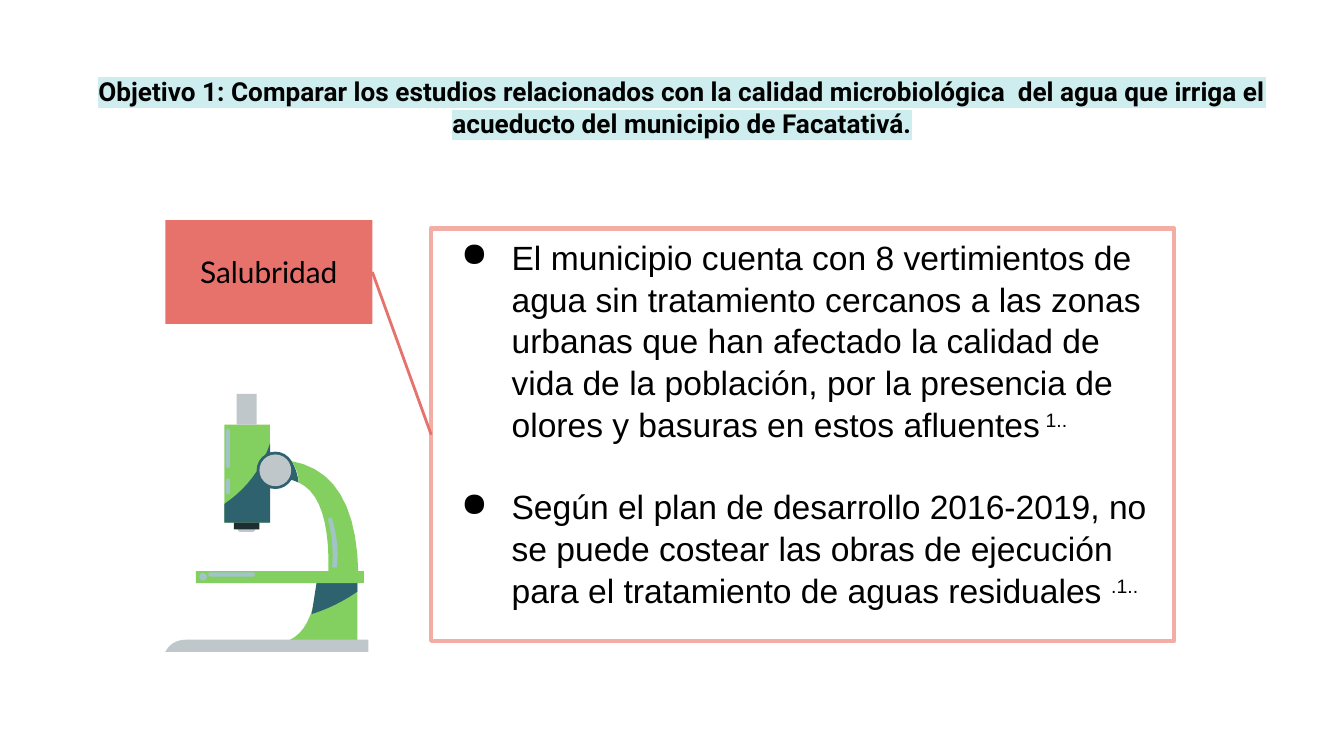
from lxml import etree
from pptx import Presentation
from pptx.dml.color import RGBColor
from pptx.enum.shapes import MSO_CONNECTOR, MSO_SHAPE
from pptx.enum.text import MSO_ANCHOR, PP_ALIGN
from pptx.oxml.ns import qn
from pptx.util import Pt

RECT, OVAL, PILL = MSO_SHAPE.RECTANGLE, MSO_SHAPE.OVAL, MSO_SHAPE.ROUNDED_RECTANGLE
LEFT, CENTER = PP_ALIGN.LEFT, PP_ALIGN.CENTER
TOP, MIDDLE = MSO_ANCHOR.TOP, MSO_ANCHOR.MIDDLE

BLACK, CORAL, PINK, AQUA = "000000", "E7716B", "F2AEA4", "CDEDEF"
GREEN, TEAL, DARK, GREY, SHEEN = "83D061", "2D626E", "1E2D31", "BFC7CA", "A2C4C9"

OBJECTIVE = ("Objetivo 1: Comparar los estudios relacionados con la calidad microbiológica  "
             "del agua que irriga el acueducto del municipio de Facatativá.")
TOPIC = " Salubridad "
# Each finding is its statement and its superscript reference
FINDINGS = [
    ("El municipio cuenta con 8 vertimientos de agua sin tratamiento cercanos a las zonas "
     "urbanas que han afectado la calidad de vida de la población, por la presencia de "
     "olores y basuras en estos afluentes", " 1.."),
    ("Según el plan de desarrollo 2016-2019, no se puede costear las obras de ejecución "
     "para el tratamiento de aguas residuales ", ".1.."),
]

# Boxes are left, top, width, height
OBJECTIVE_BOX = (19.4, 32.4, 692, 45.4)
FINDINGS_BOX = (231, 122.4, 398, 221)
TOPIC_BOX = (88.6, 118, 110.9, 55.5)
LINE_SPACING = 1.04

# Microscope, back to front: a preset with its box, or an outline (None) whose
# two-number steps are corners and four-number steps are a bend and its end
MICROSCOPE = [
    (None, GREEN, [(152, 344), (168, 340, 170, 310), (191.5, 310), (191.5, 344)]),
    (None, TEAL, [(170, 310), (191.5, 310), (191.5, 317), (180, 325, 167, 329)]),
    (None, TEAL, [(142, 245.5), (142, 255), (152, 255, 160, 258.5), (159, 251, 156, 247)]),
    (None, GREEN, [(156, 247), (160, 252, 160, 258.5), (177, 266, 176, 307),
                   (192, 307), (191, 253, 156, 247)]),
    (RECT, GREEN, (120.2, 227.5, 24.5, 52.5)),
    (None, TEAL, [(144.7, 237.6), (138, 258, 120.2, 270), (120.2, 280), (144.7, 280)]),
    (PILL, GREY, (127.4, 282, 9.4, 3)),
    (RECT, DARK, (125.3, 280, 13.7, 3.6)),
    (OVAL, TEAL, (137.5, 242, 20, 20)),
    (OVAL, GREY, (139, 243.5, 17, 17)),
    (RECT, GREY, (126.7, 211, 10.8, 16.5)),
    (RECT, GREEN, (105, 306, 90, 6.5)),
    (None, GREY, [(88.6, 349.2), (92, 342.7, 100, 342.7), (197.3, 342.7), (197.3, 349.2)]),
    (PILL, SHEEN, (121, 256.3, 2.2, 8.6)),
    (PILL, SHEEN, (121, 229.7, 2.2, 21)),
    (OVAL, SHEEN, (106.8, 307, 4, 4)),
    (PILL, SHEEN, (111.6, 306.7, 25, 2.2)),
    (None, SHEEN, [(175.7, 278), (179, 290, 178, 304), (180.5, 304), (182, 290, 177.5, 277)]),
]


def rgb(colour):
    return RGBColor.from_string(colour)


def pts(values):
    return [Pt(value) for value in values]


def paint(part, fill=None, line=None, width=0):
    part.shadow.inherit = False
    if fill:
        part.fill.solid()
        part.fill.fore_color.rgb = rgb(fill)
    else:
        part.fill.background()
    if line:
        part.line.color.rgb = rgb(line)
        part.line.width = Pt(width)
    else:
        part.line.fill.background()
    return part


def add_preset(slide, preset, box, **look):
    part = slide.shapes.add_shape(preset, *pts(box))
    if preset == PILL:
        part.adjustments[0] = 0.5
    return paint(part, **look)


def flatten(steps, pieces=10):
    """Turn corners and quadratic curves into a list of corner points."""
    corners = []
    for step in steps:
        if len(step) == 2:
            corners.append(step)
            continue
        start, bend, end = corners[-1], step[:2], step[2:]
        for piece in range(1, pieces + 1):
            t = piece / pieces
            corners.append([(1 - t) ** 2 * a + 2 * t * (1 - t) * b + t * t * c
                            for a, b, c in zip(start, bend, end)])
    return corners


def add_outline(slide, steps, **look):
    start, *rest = [pts(corner) for corner in flatten(steps)]
    builder = slide.shapes.build_freeform(*start)
    builder.add_line_segments(rest, close=True)
    return paint(builder.convert_to_shape(), **look)


def set_frame(holder, anchor=TOP, side=7.2, top=7.2):
    frame = holder.text_frame
    frame.word_wrap = True
    frame.vertical_anchor = anchor
    frame.margin_left = frame.margin_right = Pt(side)
    frame.margin_top = frame.margin_bottom = Pt(top)
    return frame


def add_text(paragraph, text, font="Arial", size=18, bold=False, align=LEFT,
             spacing=LINE_SPACING, highlight=None, baseline=0):
    paragraph.alignment = align
    paragraph.line_spacing = spacing
    run = paragraph.add_run()
    run.text = text
    run.font.size, run.font.bold = Pt(size), bold
    run.font.color.rgb = rgb(BLACK)
    run.font.name = font
    properties = run._r.get_or_add_rPr()
    if baseline:
        properties.set("baseline", str(baseline * 1000))
    if highlight:
        mark = etree.Element(qn("a:highlight"))
        etree.SubElement(mark, qn("a:srgbClr"), val=highlight)
        properties.find(qn("a:latin")).addprevious(mark)


def add_bullet(paragraph, indent=36, hanging=27):
    properties = paragraph._p.get_or_add_pPr()
    properties.set("marL", str(Pt(indent)))
    properties.set("indent", str(-Pt(hanging)))
    colour = etree.SubElement(properties, qn("a:buClr"))
    etree.SubElement(colour, qn("a:srgbClr"), val=BLACK)
    etree.SubElement(properties, qn("a:buChar"), char="●")


def main():
    deck = Presentation()
    deck.slide_width, deck.slide_height = Pt(720), Pt(405)
    slide = deck.slides.add_slide(deck.slide_layouts[6])

    objective = set_frame(slide.shapes.add_textbox(*pts(OBJECTIVE_BOX)))
    add_text(objective.paragraphs[0], OBJECTIVE, font="Roboto", size=14, bold=True,
             align=CENTER, highlight=AQUA)

    panel = add_preset(slide, RECT, FINDINGS_BOX, line=PINK, width=2.25)
    findings = set_frame(panel, top=3.5)
    for number, (statement, reference) in enumerate(FINDINGS):
        paragraph = findings.add_paragraph() if number else findings.paragraphs[0]
        paragraph.space_before = Pt(21.6 if number else 0)
        add_text(paragraph, statement)
        add_text(paragraph, reference, baseline=30)
        add_bullet(paragraph)

    topic = add_preset(slide, RECT, TOPIC_BOX, fill=CORAL)
    add_text(set_frame(topic, MIDDLE, side=0, top=0).paragraphs[0], TOPIC, font="Lato",
             size=16, align=CENTER, spacing=1.0)

    link = slide.shapes.add_connector(
        MSO_CONNECTOR.STRAIGHT, panel.left, panel.top + panel.height // 2,
        topic.left + topic.width, topic.top + topic.height // 2)
    link.line.color.rgb = rgb(CORAL)
    link.line.width = Pt(1.5)
    etree.SubElement(link._element.spPr, qn("a:effectLst"))

    for preset, colour, geometry in MICROSCOPE:
        if preset is None:
            add_outline(slide, geometry, fill=colour)
        else:
            add_preset(slide, preset, geometry, fill=colour)

    deck.save("out.pptx")


if __name__ == "__main__":
    main()
